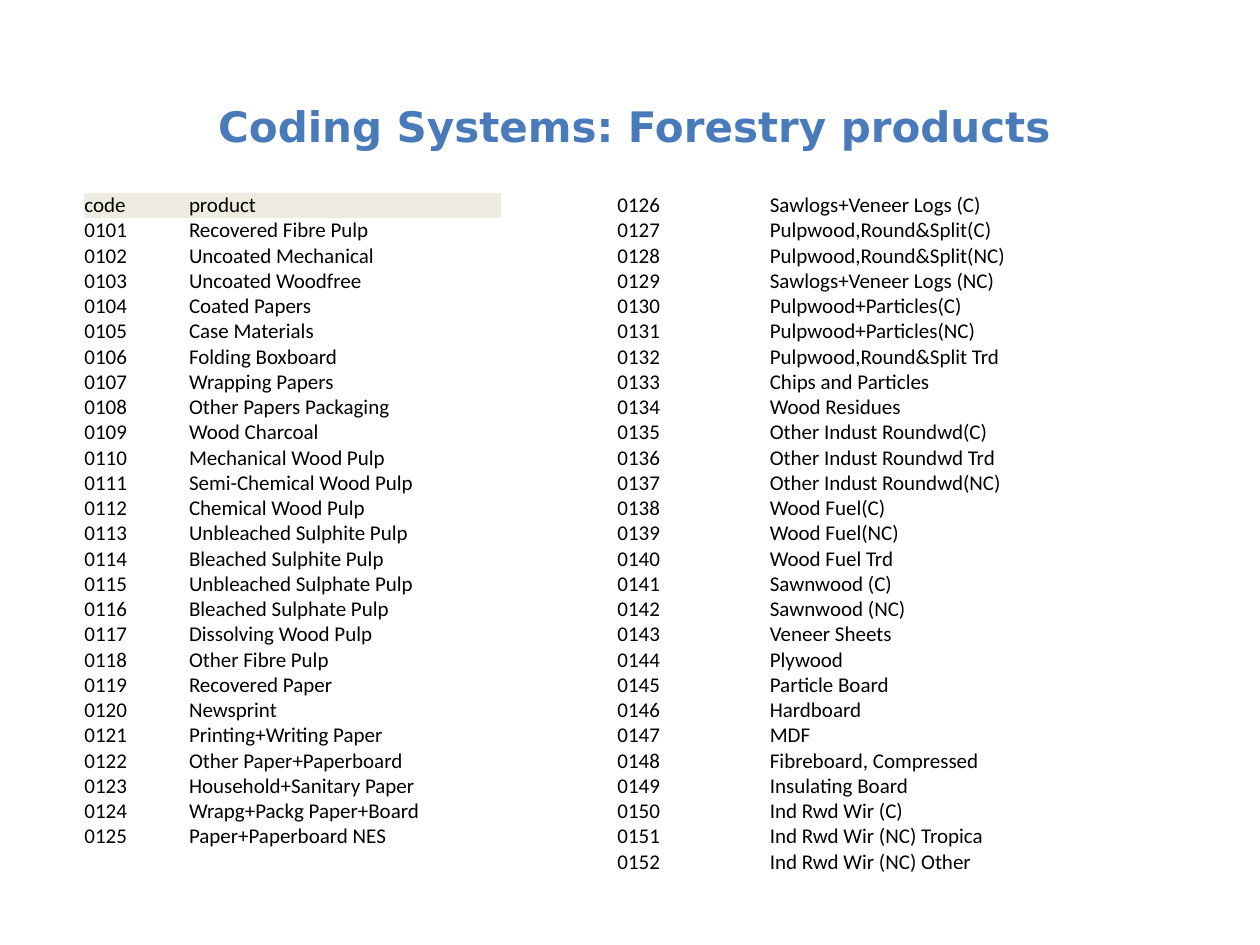
from dataclasses import dataclass

from pptx import Presentation
from pptx.dml.color import RGBColor
from pptx.enum.text import MSO_ANCHOR, PP_ALIGN
from pptx.oxml.ns import qn
from pptx.util import Inches, Pt

TITLE = "Coding Systems: Forestry products"
HEADER = ("code", "product")
LEFT = [
    "Recovered Fibre Pulp", "Uncoated Mechanical", "Uncoated Woodfree",
    "Coated Papers", "Case Materials", "Folding Boxboard", "Wrapping Papers",
    "Other Papers Packaging", "Wood Charcoal", "Mechanical Wood Pulp",
    "Semi-Chemical Wood Pulp", "Chemical Wood Pulp", "Unbleached Sulphite Pulp",
    "Bleached Sulphite Pulp", "Unbleached Sulphate Pulp",
    "Bleached Sulphate Pulp", "Dissolving Wood Pulp", "Other Fibre Pulp",
    "Recovered Paper", "Newsprint", "Printing+Writing Paper",
    "Other Paper+Paperboard", "Household+Sanitary Paper",
    "Wrapg+Packg Paper+Board", "Paper+Paperboard NES",
]
RIGHT = [
    "Sawlogs+Veneer Logs (C)", "Pulpwood,Round&Split(C)",
    "Pulpwood,Round&Split(NC)", "Sawlogs+Veneer Logs (NC)",
    "Pulpwood+Particles(C)", "Pulpwood+Particles(NC)",
    "Pulpwood,Round&Split Trd", "Chips and Particles", "Wood Residues",
    "Other Indust Roundwd(C)", "Other Indust Roundwd Trd",
    "Other Indust Roundwd(NC)", "Wood Fuel(C)", "Wood Fuel(NC)",
    "Wood Fuel Trd", "Sawnwood (C)", "Sawnwood (NC)", "Veneer Sheets",
    "Plywood", "Particle Board", "Hardboard", "MDF", "Fibreboard, Compressed",
    "Insulating Board", "Ind Rwd Wir (C)", "Ind Rwd Wir (NC) Tropica",
    "Ind Rwd Wir (NC) Other",
]


@dataclass(frozen=True)
class Theme:
    blue: RGBColor = RGBColor(0x49, 0x7A, 0xBA)
    black: RGBColor = RGBColor(0, 0, 0)
    beige: RGBColor = RGBColor(0xEE, 0xEC, 0xE1)
    head: str = "DejaVu Sans"
    body: str = "Calibri"
    large: Pt = Pt(24)
    small: Pt = Pt(12)


THEME = Theme()
FIRST = 101
TOP, ROW = 1.53, 0.2
NO_STYLE = "{2D5ABB26-0587-4C30-8999-92F81FD0307C}"


def style(font, name, size, color, bold=False):
    font.name, font.size, font.bold = name, size, bold
    font.color.rgb = color


def number(names, start):
    """Pair each product with its four-digit code."""
    return [(f"{code:04d}", name) for code, name in enumerate(names, start)]


def add_title(slide):
    box = slide.shapes.add_textbox(
        Inches(0.35), Inches(0.92), Inches(9.37), Inches(0.54))
    frame = box.text_frame
    frame.word_wrap = True
    frame.vertical_anchor = MSO_ANCHOR.MIDDLE
    frame.margin_bottom = Inches(0.43)  # lifts the line clear of the tables
    frame.text = TITLE
    line = frame.paragraphs[0]
    line.alignment = PP_ALIGN.CENTER
    style(line.runs[0].font, THEME.head, THEME.large, THEME.blue, True)


def add_list(slide, rows, left, widths):
    table = slide.shapes.add_table(
        len(rows), len(widths), Inches(left), Inches(TOP),
        Inches(sum(widths)), Inches(ROW * len(rows))).table
    table.first_row = table.horz_banding = False
    table._tbl.tblPr.find(qn("a:tableStyleId")).text = NO_STYLE
    for column, width in zip(table.columns, widths):
        column.width = Inches(width)
    for r, row in enumerate(rows):
        table.rows[r].height = Inches(ROW)
        for c, text in enumerate(row):
            cell = table.cell(r, c)
            cell.margin_left = cell.margin_right = 0
            cell.margin_top = cell.margin_bottom = 0
            cell.vertical_anchor = MSO_ANCHOR.BOTTOM
            if row == HEADER:
                cell.fill.solid()
                cell.fill.fore_color.rgb = THEME.beige
            else:
                cell.fill.background()
            cell.text_frame.text = text
            run = cell.text_frame.paragraphs[0].runs[0]
            style(run.font, THEME.body, THEME.small, THEME.black)


def main():
    deck = Presentation()
    deck.slide_width, deck.slide_height = Inches(10), Inches(7.5)
    slide = deck.slides.add_slide(deck.slide_layouts[6])
    add_title(slide)
    add_list(slide, [HEADER] + number(LEFT, FIRST), 0.67, (0.83, 2.48))
    add_list(slide, number(RIGHT, FIRST + len(LEFT)), 4.9, (1.21, 3.61))
    deck.save("out.pptx")


if __name__ == "__main__":
    main()
